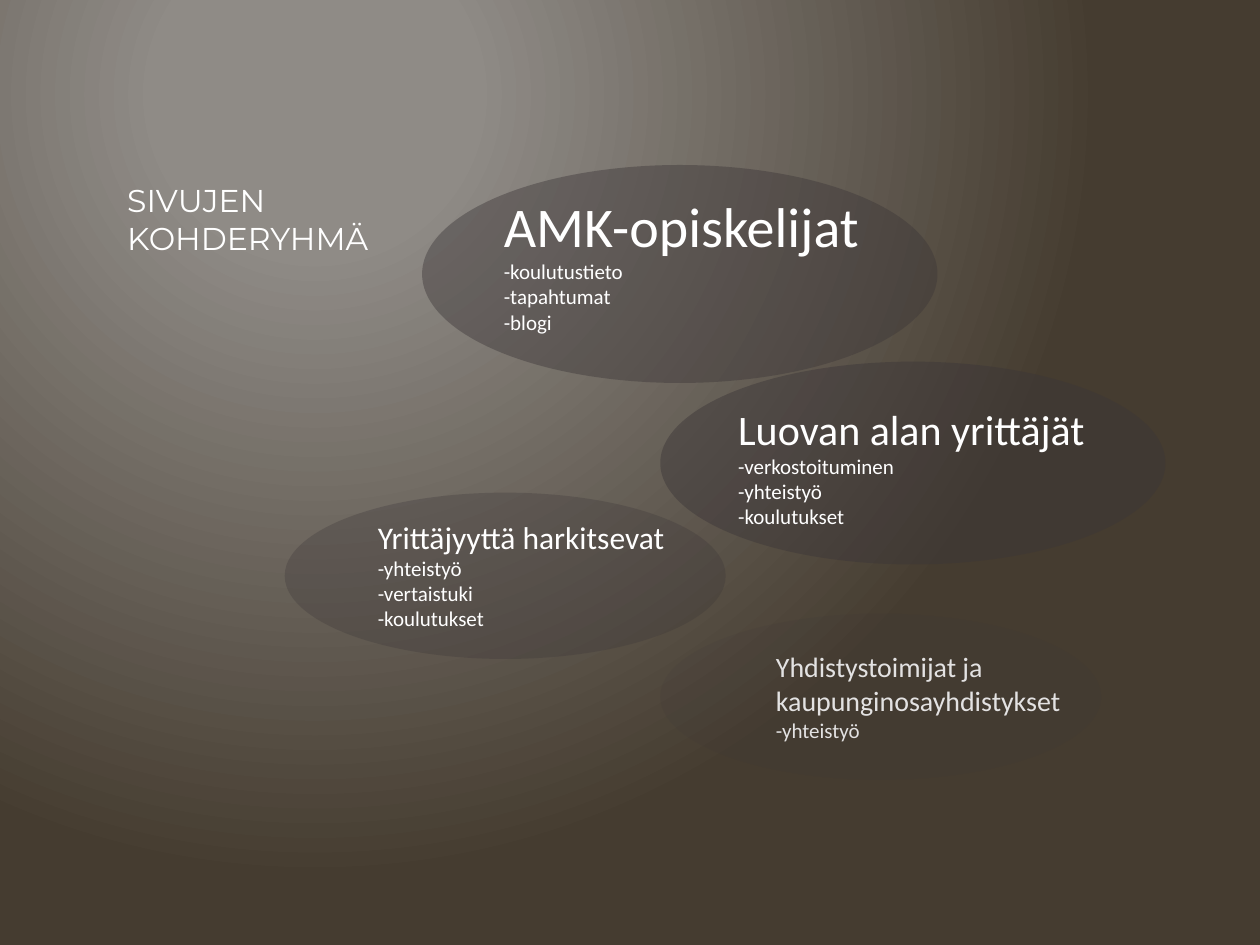
from pptx import Presentation
from pptx.dml.color import RGBColor
from pptx.enum.shapes import MSO_SHAPE
from pptx.enum.text import MSO_ANCHOR, MSO_AUTO_SIZE, PP_ALIGN
from pptx.oxml import parse_xml
from pptx.oxml.ns import nsdecls, qn
from pptx.util import Inches, Pt


def color(hex_string):
    return RGBColor.from_string(hex_string)


def add_ellipse(left, top, width, height, opacity):
    ellipse = slide.shapes.add_shape(
        MSO_SHAPE.OVAL, Inches(left), Inches(top), Inches(width), Inches(height))
    ellipse.shadow.inherit = False
    ellipse.line.fill.background()
    ellipse.fill.solid()
    ellipse.fill.fore_color.rgb = color("3C3638")
    fill_color = ellipse.element.spPr.find(".//" + qn("a:srgbClr"))
    fill_color.append(parse_xml(f'<a:alpha {nsdecls("a")} val="{opacity * 1000}"/>'))


presentation = Presentation()
presentation.slide_width = Inches(10)
presentation.slide_height = Inches(7.5)
slide = presentation.slides.add_slide(presentation.slide_layouts[5])

# Background: radial gradient lit from the upper left
background = slide.background.fill
background.gradient()
for stop, (position, shade) in zip(background.gradient_stops,
                                   [(0.2, "8F8B86"), (1, "453C30")]):
    stop.position = position
    stop.color.rgb = color(shade)
linear = slide.element.find(".//" + qn("a:lin"))
linear.getparent().replace(linear, parse_xml(
    f'<a:path {nsdecls("a")} path="circle">'
    '<a:fillToRect l="50000" t="20000" r="100000" b="100000"/></a:path>'))

# Ellipses behind the text
for ellipse_area in [(2.26, 3.91, 3.5, 1.32, 30),
                     (5.24, 2.87, 4.01, 1.61, 47),
                     (3.35, 1.31, 4.09, 1.73, 43)]:
    add_ellipse(*ellipse_area)

# Title
title = slide.shapes.title
title.left, title.top = Inches(0.91), Inches(1.39)
title.width, title.height = Inches(2.27), Inches(2.16)
title.text_frame.text = "SIVUJEN KOHDERYHMÄ"
title.text_frame.word_wrap = True
title.text_frame.auto_size = MSO_AUTO_SIZE.NONE
title.text_frame.vertical_anchor = MSO_ANCHOR.TOP
heading = title.text_frame.paragraphs[0]
heading.alignment = PP_ALIGN.LEFT
heading.font.name = "Montserrat"
heading.font.size = Pt(18)
heading.font.color.rgb = color("FFFFFF")

# Target groups: area, name size, name, what the site offers them
target_groups = [
    ((3.9, 1.47, 3.65, 1.25), 32, "AMK-opiskelijat",
     ["koulutustieto", "tapahtumat", "blogi"]),
    ((5.76, 3.15, 3.62, 1.11), 24, "Luovan alan yrittäjät",
     ["verkostoituminen", "yhteistyö", "koulutukset"]),
    ((2.9, 4.06, 2.68, 1.01), 18, "Yrittäjyyttä harkitsevat",
     ["yhteistyö", "vertaistuki", "koulutukset"]),
    ((6.06, 5.11, 2.99, 0.84), 16, "Yhdistystoimijat ja kaupunginosayhdistykset",
     ["yhteistyö"]),
]
for area, name_size, name, offers in target_groups:
    group = slide.shapes.add_textbox(*[Inches(length) for length in area]).text_frame
    group.word_wrap = True
    group.auto_size = MSO_AUTO_SIZE.SHAPE_TO_FIT_TEXT
    group.text = "\n".join([name] + [f"-{offer}" for offer in offers])
    for index, paragraph in enumerate(group.paragraphs):
        paragraph.font.name = "Calibri"
        paragraph.font.size = Pt(12 if index else name_size)
        paragraph.font.color.rgb = color("FFFFFF")

# Faint ellipse laid over the last group
add_ellipse(5.24, 4.87, 3.5, 1.32, 14)

presentation.save("out.pptx")
